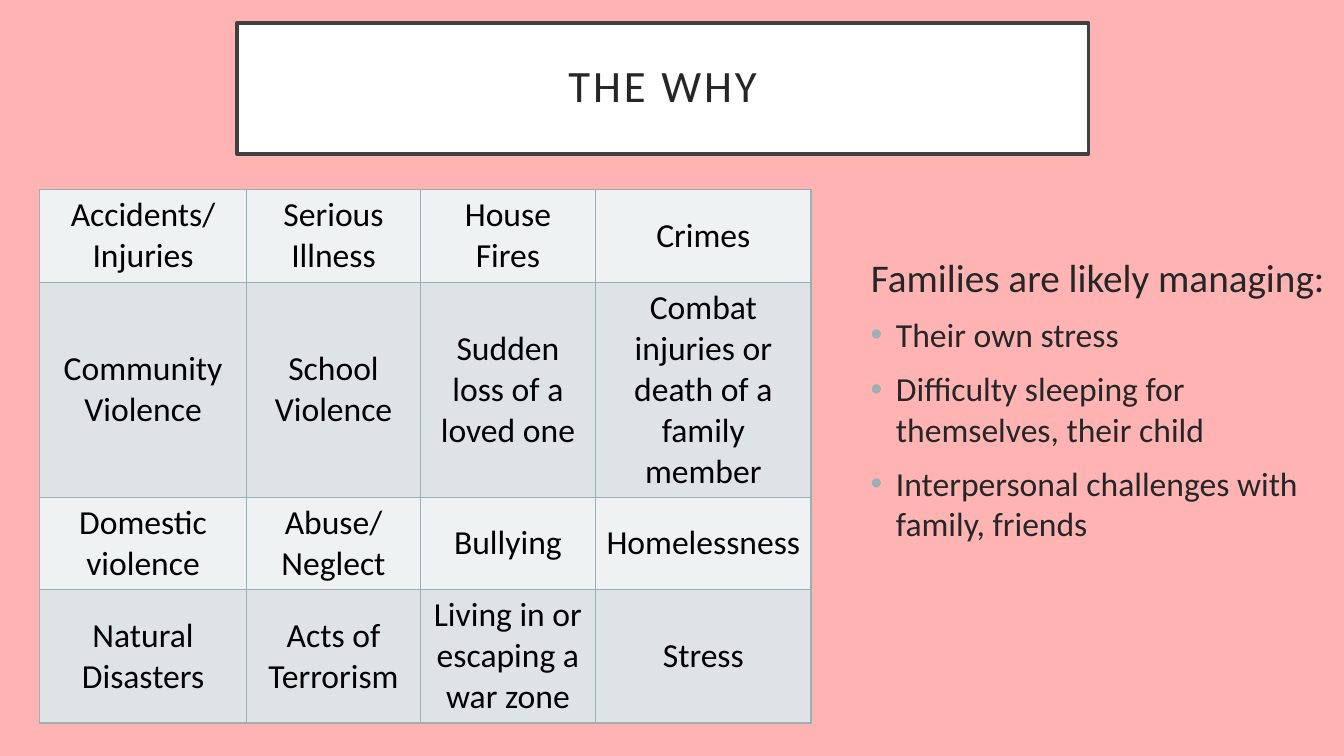
from lxml.etree import SubElement
from pptx import Presentation
from pptx.dml.color import RGBColor
from pptx.enum.shapes import MSO_SHAPE as Shape
from pptx.enum.text import MSO_ANCHOR as Anchor, PP_ALIGN as Align
from pptx.oxml import parse_xml
from pptx.oxml.ns import nsdecls, qn
from pptx.util import Cm, Pt

PINK = RGBColor(0xFF, 0xB3, 0xB3)
WHITE = RGBColor(0xFF, 0xFF, 0xFF)
BLACK = RGBColor(0x00, 0x00, 0x00)
FRAME = RGBColor(0x40, 0x40, 0x40)
INK = RGBColor(0x26, 0x26, 0x26)
SAGE = RGBColor(0x9B, 0xAF, 0xB5)
ROW_FILLS = (RGBColor(0xEF, 0xF2, 0xF3), RGBColor(0xDE, 0xE3, 0xE5))

# Each cell lists its paragraphs
CAUSES = [
    [["Accidents/", "Injuries"], ["Serious Illness"], ["House Fires"], ["Crimes"]],
    [["Community Violence"], ["School Violence"], ["Sudden loss of a loved one"],
     ["Combat injuries or death of a family member"]],
    [["Domestic violence"], ["Abuse/ Neglect"], ["Bullying"], ["Homelessness"]],
    [["Natural Disasters"], ["Acts of Terrorism"],
     ["Living in or escaping a war zone"], ["Stress"]],
]
COLUMN_WIDTHS = (5.23, 4.37, 4.42, 5.43)
ROW_HEIGHTS = (2.33, 5.42, 2.33, 3.36)
BURDENS = [
    "Their own stress",
    "Difficulty sleeping for themselves, their child",
    "Interpersonal challenges with family, friends",
]


class SlideBuilder:
    font = "Calibri"

    def __init__(self, slide):
        self.slide = slide
        slide.background.fill.solid()
        slide.background.fill.fore_color.rgb = PINK

    def add_run(self, paragraph, text, size, color):
        run = paragraph.add_run()
        run.text = text
        run.font.name = self.font
        run.font.size = Pt(size)
        run.font.color.rgb = color
        return run

    def title(self, text, left, top, width, height):
        banner = self.slide.shapes.add_shape(
            Shape.RECTANGLE, Cm(left), Cm(top), Cm(width), Cm(height))
        banner.shadow.inherit = False
        banner.fill.solid()
        banner.fill.fore_color.rgb = WHITE
        banner.line.color.rgb = FRAME
        banner.line.width = Pt(2.5)
        frame = banner.text_frame
        frame.word_wrap = True
        frame.vertical_anchor = Anchor.MIDDLE
        frame.margin_left = frame.margin_right = Cm(0.5)
        frame.margin_top = frame.margin_bottom = Cm(0.5)
        heading = frame.paragraphs[0]
        heading.alignment = Align.CENTER
        heading.line_spacing = 0.9
        run = self.add_run(heading, text, 32, INK)
        run.font._element.set("spc", "200")

    def table(self, rows, left, top, widths, heights):
        grid = self.slide.shapes.add_table(
            len(rows), len(widths), Cm(left), Cm(top),
            Cm(sum(widths)), Cm(sum(heights))).table
        for column, width in zip(grid.columns, widths):
            column.width = Cm(width)
        for r, (row, height) in enumerate(zip(rows, heights)):
            grid.rows[r].height = Cm(height)
            for c, lines in enumerate(row):
                self.cell(grid.cell(r, c), lines, ROW_FILLS[r % 2])

    def cell(self, cell, lines, fill):
        cell.vertical_anchor = Anchor.MIDDLE
        cell.fill.solid()
        cell.fill.fore_color.rgb = fill
        frame = cell.text_frame
        for i, line in enumerate(lines):
            paragraph = frame.add_paragraph() if i else frame.paragraphs[0]
            paragraph.alignment = Align.CENTER
            self.add_run(paragraph, line, 24, BLACK)
        # Borders come before the fill in the cell properties
        properties = cell._tc.get_or_add_tcPr()
        for i, side in enumerate(("lnL", "lnR", "lnT", "lnB")):
            properties.insert(i, parse_xml(
                f'<a:{side} {nsdecls("a")} w="{Pt(1)}"><a:solidFill>'
                f'<a:srgbClr val="{SAGE}"/></a:solidFill></a:{side}>'))

    def bullet_list(self, lead, items, left, top, width, height):
        frame = self.slide.shapes.add_textbox(
            Cm(left), Cm(top), Cm(width), Cm(height)).text_frame
        frame.word_wrap = True
        intro = frame.paragraphs[0]
        self.indent(intro, 0.64, 0)
        self.add_run(intro, lead, 28, INK)
        for item in items:
            paragraph = frame.add_paragraph()
            self.bullet(self.indent(paragraph, 1.27, -0.64))
            self.add_run(paragraph, item, 24, INK)

    def indent(self, paragraph, margin, first_line):
        paragraph.space_before = Pt(10)
        properties = paragraph._p.get_or_add_pPr()
        properties.set("marL", str(Cm(margin)))
        properties.set("indent", str(Cm(first_line)))
        return properties

    def bullet(self, properties):
        color = SubElement(properties, qn("a:buClr"))
        SubElement(color, qn("a:srgbClr"), val=str(SAGE))
        SubElement(properties, qn("a:buFont"), typeface="Arial")
        SubElement(properties, qn("a:buChar"), char="•")


def main():
    deck = Presentation()
    deck.slide_width, deck.slide_height = Cm(33.87), Cm(19.05)
    why = SlideBuilder(deck.slides.add_slide(deck.slide_layouts[6]))

    # Title banner
    why.title("THE WHY", 5.97, 0.58, 21.46, 3.3)

    # What families are dealing with
    why.bullet_list("Families are likely managing:", BURDENS, 21.06, 6.25, 12.75, 10.69)

    # Causes of trauma
    why.table(CAUSES, 0.99, 4.78, COLUMN_WIDTHS, ROW_HEIGHTS)

    deck.save("out.pptx")


if __name__ == "__main__":
    main()
